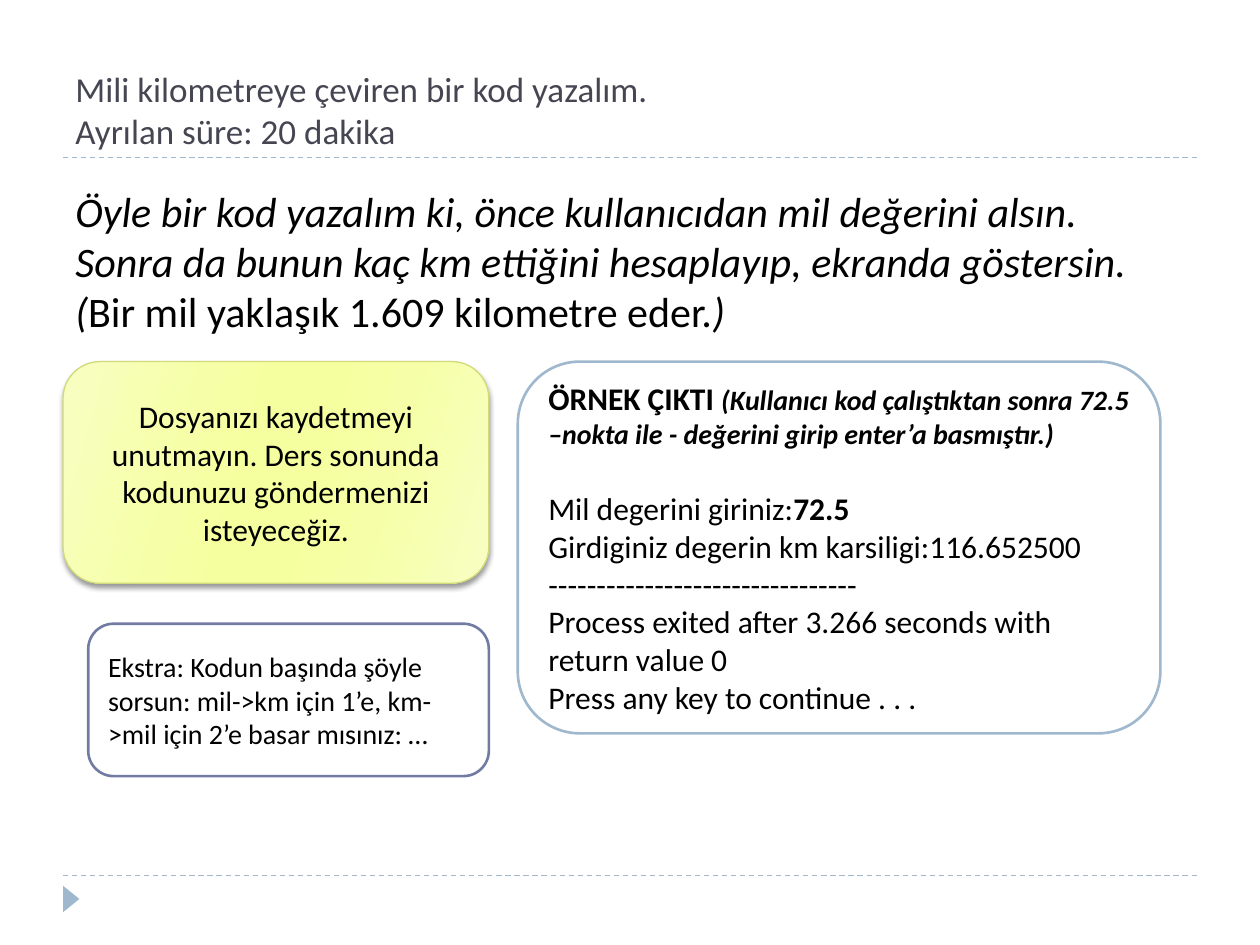
from lxml import etree
from pptx import Presentation
from pptx.dml.color import RGBColor
from pptx.enum.dml import MSO_LINE
from pptx.enum.shapes import MSO_CONNECTOR, MSO_SHAPE
from pptx.enum.text import MSO_ANCHOR, PP_ALIGN
from pptx.oxml.ns import qn
from pptx.util import Inches, Pt

STRAIGHT, DASH = MSO_CONNECTOR.STRAIGHT, MSO_LINE.DASH
ROUNDED, TRIANGLE = MSO_SHAPE.ROUNDED_RECTANGLE, MSO_SHAPE.ISOSCELES_TRIANGLE
TOP, MIDDLE, BOTTOM = MSO_ANCHOR.TOP, MSO_ANCHOR.MIDDLE, MSO_ANCHOR.BOTTOM
LEFT, CENTER = PP_ALIGN.LEFT, PP_ALIGN.CENTER

FONT = "Calibri"
BLACK = RGBColor(0x00, 0x00, 0x00)
WHITE = RGBColor(0xFF, 0xFF, 0xFF)
TITLE_GRAY = RGBColor(0x46, 0x46, 0x53)
LIGHT_BLUE = RGBColor(0x9F, 0xB8, 0xCD)
INDIGO = RGBColor(0x72, 0x7C, 0xA3)
LIME = RGBColor(0xD2, 0xDA, 0x7A)
LIME_PALE = RGBColor(0xF8, 0xFE, 0xC2)
LIME_MID = RGBColor(0xF6, 0xFF, 0xA7)
LIME_BRIGHT = RGBColor(0xF6, 0xFF, 0x9F)
LIME_STOPS = [(0, LIME_PALE), (30, LIME_MID), (45, LIME_BRIGHT),
              (55, LIME_BRIGHT), (73, LIME_MID), (100, LIME_PALE)]


def add_run(paragraph, text, size=18, color=BLACK, bold=False, italic=False):
    run = paragraph.add_run()
    run.text = text
    font = run.font
    font.name, font.size, font.bold, font.italic = FONT, Pt(size), bold, italic
    font.color.rgb = color


def write_text(shape, paragraphs, anchor=TOP, align=LEFT, **text_format):
    """Fill a shape with paragraphs, each a list of (text, own format) runs."""
    frame = shape.text_frame
    frame.word_wrap = True
    frame.vertical_anchor = anchor
    for index, runs in enumerate(paragraphs):
        paragraph = frame.add_paragraph() if index else frame.paragraphs[0]
        paragraph.alignment = align
        for text, own_format in runs:
            add_run(paragraph, text, **{**text_format, **own_format})
    return frame


def add_text(slide, box, paragraphs, **text_format):
    shape = slide.shapes.add_textbox(*map(Inches, box))
    return write_text(shape, paragraphs, **text_format)


def add_card(slide, box, line_color, line_width):
    card = slide.shapes.add_shape(ROUNDED, *map(Inches, box))
    card.shadow.inherit = False
    card.fill.solid()
    card.fill.fore_color.rgb = WHITE
    card.line.color.rgb = line_color
    card.line.width = Pt(line_width)
    return card


def add_color(parent, color):
    return etree.SubElement(parent, qn("a:srgbClr"), val=str(color))


def set_gradient(shape, stops, angle):
    shape.fill.gradient()
    shape.fill.gradient_angle = 360 - angle
    stop_list = shape.element.spPr.find(qn("a:gradFill")).find(qn("a:gsLst"))
    for stop in list(stop_list):
        stop_list.remove(stop)
    for percent, color in stops:
        stop = etree.SubElement(stop_list, qn("a:gs"), pos=str(percent * 1000))
        add_color(stop, color)


def set_shadow(shape, blur, distance, direction, opacity):
    effects = shape.element.spPr.find(qn("a:effectLst"))
    shadow = etree.SubElement(
        effects, qn("a:outerShdw"), blurRad=str(Pt(blur)), dist=str(Pt(distance)),
        dir=str(direction * 60000), rotWithShape="0")
    etree.SubElement(add_color(shadow, BLACK), qn("a:alpha"), val=str(opacity * 1000))


def add_frame(slide, left, right, line_tops):
    # Dashed rules and the footer marker
    for top in line_tops:
        rule = slide.shapes.add_connector(
            STRAIGHT, Inches(left), Inches(top), Inches(right), Inches(top))
        rule.line.color.rgb = LIGHT_BLUE
        rule.line.width = Pt(0.75)
        rule.line.dash_style = DASH
        etree.SubElement(rule.element.spPr, qn("a:effectLst"))
    marker = slide.shapes.add_shape(
        TRIANGLE, Inches(0.46), Inches(7.07), Inches(0.21), Inches(0.13))
    marker.rotation = 90
    marker.shadow.inherit = False
    marker.fill.solid()
    marker.fill.fore_color.rgb = LIGHT_BLUE
    marker.line.fill.background()


def add_title(slide, box):
    add_text(slide, box, [
        [("Mili kilometreye çeviren bir kod yazalım.", {})],
        [("Ayrılan süre: 20 dakika", {})],
    ], anchor=BOTTOM, size=20, color=TITLE_GRAY)


def add_task(slide, box):
    add_text(slide, box, [
        [("Öyle bir kod yazalım ki, önce kullanıcıdan mil değerini alsın. "
          "Sonra da bunun kaç km ettiğini hesaplayıp, ekranda göstersin.", {})],
        [("(", {}), ("Bir mil yaklaşık 1.609 kilometre eder.", {"italic": False}),
         (")", {})],
    ], size=24, italic=True)


def add_reminder(slide, box):
    card = add_card(slide, box, LIME, 0.75)
    set_gradient(card, LIME_STOPS, angle=16)
    set_shadow(card, blur=3, distance=2, direction=90, opacity=40)
    write_text(card, [[("Dosyanızı kaydetmeyi unutmayın. Ders sonunda kodunuzu "
                        "göndermenizi isteyeceğiz.", {})]],
               anchor=MIDDLE, align=CENTER)


def add_sample_output(slide, box):
    card = add_card(slide, box, LIGHT_BLUE, 1.5)
    frame = write_text(card, [
        [("ÖRNEK ÇIKTI ", {"bold": True}),
         ("(Kullanıcı kod çalıştıktan sonra 72.5 –nokta ile - değerini girip "
          "enter’a basmıştır.)", {"size": 16, "bold": True, "italic": True})],
        [("Mil degerini giriniz:", {}), ("72.5", {"bold": True})],
        [("Girdiginiz degerin km karsiligi:116.652500", {})],
        [("-" * 32, {})],
        [("Process exited after 3.266 seconds with return value 0", {})],
        [("Press any key to continue . . .", {})],
    ], anchor=MIDDLE)
    frame.paragraphs[0].space_after = Pt(22)


def add_extra(slide, box):
    card = add_card(slide, box, INDIGO, 1.5)
    write_text(card, [[("Ekstra: Kodun başında şöyle sorsun: mil->km için 1’e, "
                        "km->mil için 2’e basar mısınız: …", {})]],
               anchor=MIDDLE, size=16)


def main():
    presentation = Presentation()
    presentation.slide_width, presentation.slide_height = Inches(10), Inches(7.5)
    slide = presentation.slides.add_slide(presentation.slide_layouts[6])
    add_frame(slide, 0.5, 9.5, (6.95, 1.25))
    add_title(slide, (0.5, 0.25, 9, 1))
    add_task(slide, (0.5, 1.42, 8.71, 1.3))
    add_reminder(slide, (0.5, 2.87, 3.38, 1.76))
    add_sample_output(slide, (4.11, 2.87, 5.1, 2.95))
    add_extra(slide, (0.7, 4.95, 3.18, 1.21))
    presentation.save("out.pptx")


if __name__ == "__main__":
    main()
